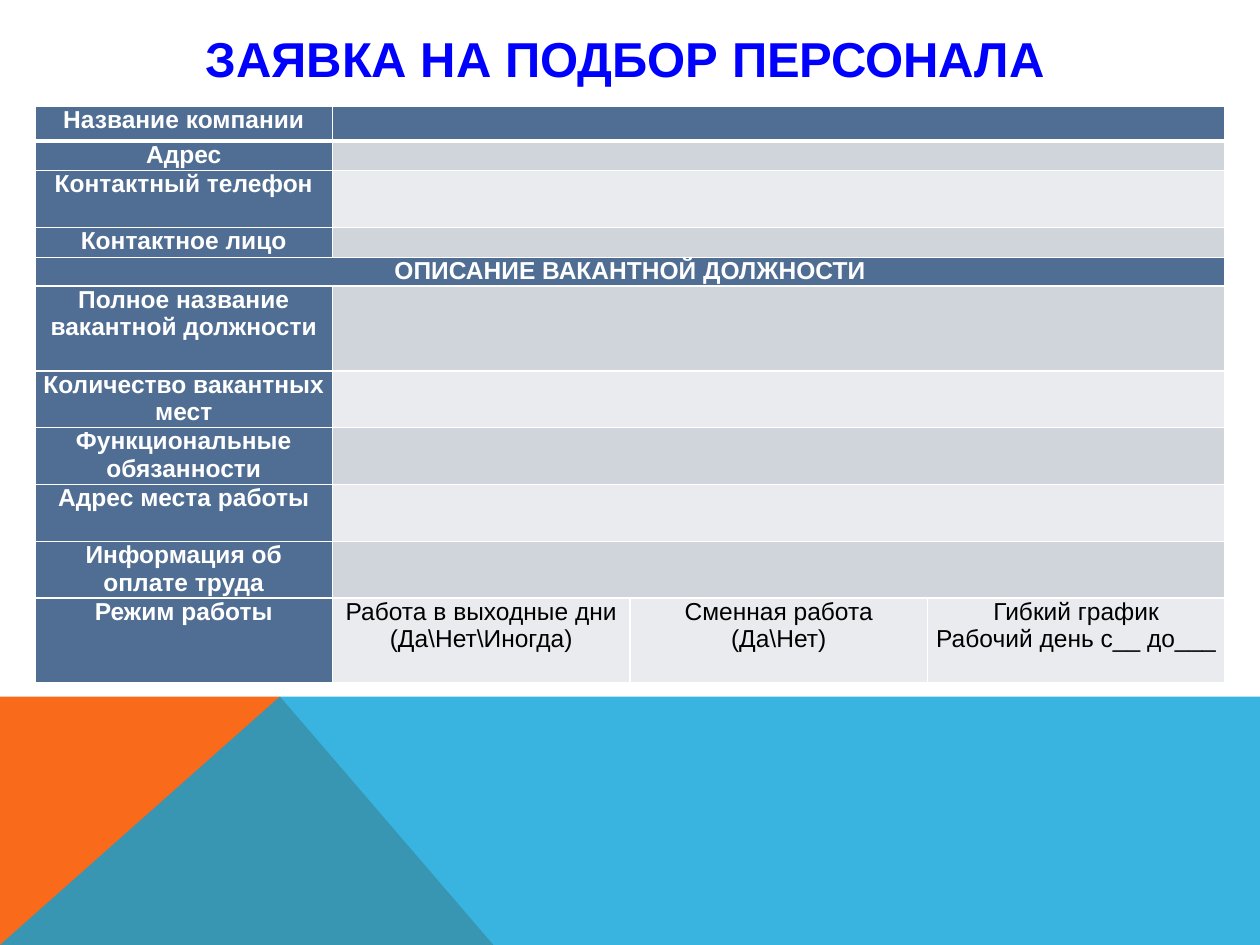
from dataclasses import dataclass

from lxml import etree
from pptx import Presentation
from pptx.dml.color import RGBColor
from pptx.enum.text import MSO_ANCHOR, PP_ALIGN
from pptx.oxml.ns import qn
from pptx.util import Pt

CENTER = PP_ALIGN.CENTER
TOP = MSO_ANCHOR.TOP
MIDDLE = MSO_ANCHOR.MIDDLE


@dataclass
class Theme:
    font: str = "Arial"
    title_size: int = 28
    cell_size: int = 14
    title: str = "0000FF"
    label: str = "506E94"
    bands: tuple = ("E9EBEE", "D0D5DC")
    light: str = "FFFFFF"
    dark: str = "000000"
    orange: str = "F96A1B"
    blue: str = "08A1D9"


theme = Theme()


def write_text(frame, text, size, color, bold=False, anchor=TOP, inset=0):
    frame.word_wrap = True
    frame.vertical_anchor = anchor
    frame.margin_left = frame.margin_right = Pt(inset)
    frame.margin_top = frame.margin_bottom = 0
    frame.text = text
    for para in frame.paragraphs:
        para.alignment = CENTER
        for span in para.runs:
            span.font.name = theme.font
            span.font.size = Pt(size)
            span.font.bold = bold
            span.font.color.rgb = RGBColor.from_string(color)
        if not para.runs:
            etree.SubElement(para._p, qn("a:endParaRPr"), sz=str(size * 100))


def draw_borders(cell, widths):
    properties = cell._tc.get_or_add_tcPr()
    for position, (side, width) in enumerate(widths.items()):
        line = etree.Element(qn(f"a:ln{side}"), w=str(Pt(width)))
        fill = etree.SubElement(line, qn("a:solidFill"))
        etree.SubElement(fill, qn("a:srgbClr"), val=theme.light)
        properties.insert(position, line)


deck = Presentation()
deck.slide_width = Pt(720)
deck.slide_height = Pt(540)
page = deck.slides.add_slide(deck.slide_layouts[5])

peak = (160.5, 397.5)
decorations = [
    ([(0, 540), (0, 397.5), peak, (281.5, 540)], theme.orange, 100),
    ([(0, 540), peak, (720, 398), (720, 540)], theme.blue, 80),
]
for points, color, opacity in decorations:
    builder = page.shapes.build_freeform(*points[0], scale=Pt(1))
    builder.add_line_segments(points[1:], close=True)
    shape = builder.convert_to_shape()
    shape.shadow.inherit = False
    shape.line.fill.background()
    shape.fill.solid()
    shape.fill.fore_color.rgb = RGBColor.from_string(color)
    if opacity < 100:
        tint = shape._element.spPr.find(f".//{qn('a:srgbClr')}")
        etree.SubElement(tint, qn("a:alpha"), val=str(opacity * 1000))

title = page.shapes.title
title.left, title.top, title.width, title.height = Pt(65), Pt(11.5), Pt(592), Pt(43)
write_text(title.text_frame, "ЗАЯВКА НА ПОДБОР ПЕРСОНАЛА ", size=theme.title_size,
           color=theme.title, bold=True, anchor=MIDDLE, inset=7.2)

rows = [
    (20, ["Название компании"]),
    (16.4, ["Адрес"]),
    (32.5, ["Контактный телефон"]),
    (16.4, ["Контактное лицо"]),
    (16.4, ["ОПИСАНИЕ ВАКАНТНОЙ ДОЛЖНОСТИ"]),
    (48.4, ["Полное название вакантной должности"]),
    (32.5, ["Количество вакантных мест"]),
    (32.5, ["Функциональные обязанности"]),
    (32.5, ["Адрес места работы"]),
    (32.5, ["Информация об оплате труда"]),
    (48.4, ["Режим работы", "Работа в выходные дни (Да\\Нет\\Иногда)",
            "Сменная работа (Да\\Нет)", "Гибкий график\nРабочий день с__ до___"]),
]
section_row = 4
column_count = 4
column_width = 170
table = page.shapes.add_table(len(rows), column_count, Pt(20), Pt(60.5),
                              Pt(column_width * column_count),
                              Pt(sum(height for height, texts in rows))).table
for column in table.columns:
    column.width = Pt(column_width)

for row_index, (height, texts) in enumerate(rows):
    table.rows[row_index].height = Pt(height)
    for column_index in range(column_count):
        cell = table.cell(row_index, column_index)
        is_label = column_index == 0
        text = texts[column_index] if column_index < len(texts) else ""
        write_text(cell.text_frame, text, size=theme.cell_size,
                   color=theme.light if is_label else theme.dark, bold=is_label)
        cell.margin_left = cell.margin_right = Pt(4.5)
        cell.margin_top = cell.margin_bottom = 0
        cell.vertical_anchor = TOP
        is_dark = is_label or row_index in (0, section_row)
        color = theme.label if is_dark else theme.bands[row_index % 2]
        cell.fill.solid()
        cell.fill.fore_color.rgb = RGBColor.from_string(color)
        draw_borders(cell, {"L": 1, "R": 1, "T": 3 if row_index == 1 else 1,
                            "B": 3 if row_index == 0 else 1})
    if len(texts) == 1:
        first = 0 if row_index == section_row else 1
        table.cell(row_index, first).merge(table.cell(row_index, column_count - 1))

deck.save("out.pptx")
